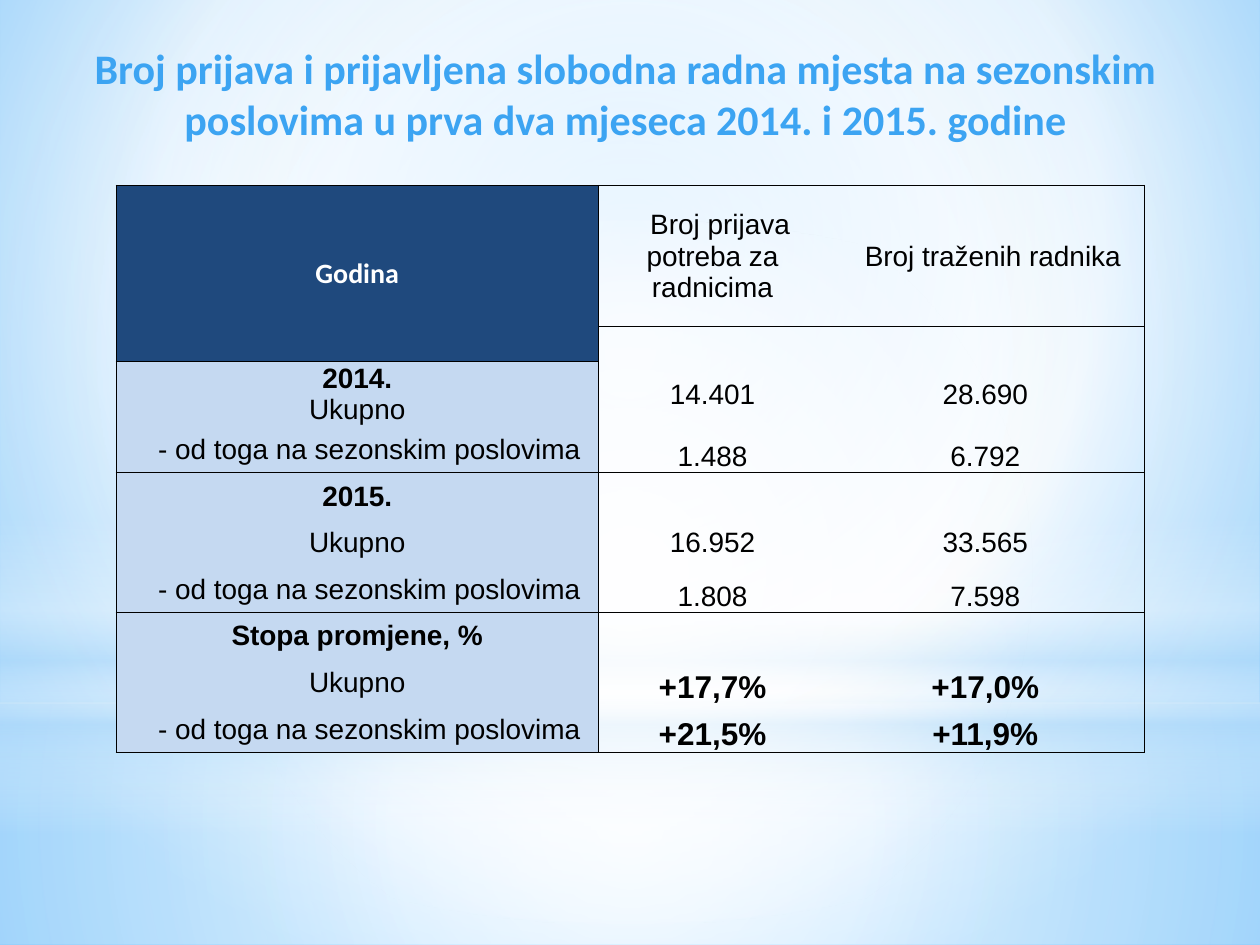
from lxml import etree
from pptx import Presentation
from pptx.dml.color import RGBColor
from pptx.enum.shapes import MSO_SHAPE
from pptx.enum.text import MSO_ANCHOR, PP_ALIGN
from pptx.oxml.ns import qn
from pptx.util import Inches, Pt

CENTER = PP_ALIGN.CENTER
TOP, MIDDLE, BOTTOM = MSO_ANCHOR.TOP, MSO_ANCHOR.MIDDLE, MSO_ANCHOR.BOTTOM
RECTANGLE, OVAL = MSO_SHAPE.RECTANGLE, MSO_SHAPE.OVAL

SKY = RGBColor(0x3C, 0xA4, 0xF2)
NAVY = RGBColor(0x1F, 0x49, 0x7D)
PALE = RGBColor(0xC5, 0xD9, 0xF1)
BLACK = RGBColor(0, 0, 0)
WHITE = RGBColor(0xFF, 0xFF, 0xFF)
MIST = RGBColor(0xB4, 0xDC, 0xFA)
BACK_INNER = RGBColor(0x9E, 0xD5, 0xFF)
BACK_OUTER = RGBColor(0x5B, 0xB9, 0xFF)

TITLE = ("Broj prijava i prijavljena slobodna radna mjesta na sezonskim "
         "poslovima u prva dva mjeseca 2014. i 2015. godine")
SEASONAL = "- od toga na sezonskim poslovima"
ROWS = [
    ("Godina", "Broj prijava potreba za radnicima", "Broj traženih radnika"),
    ("", "", ""),
    ("2014.\nUkupno", "14.401", "28.690"),
    (SEASONAL, "1.488", "6.792"),
    ("2015.", "", ""),
    ("Ukupno", "16.952", "33.565"),
    (SEASONAL, "1.808", "7.598"),
    ("Stopa promjene, %", "", ""),
    ("Ukupno", "+17,7%", "+17,0%"),
    (SEASONAL, "+21,5%", "+11,9%"),
]
GROUP_TITLES = ("2014.", "2015.", "Stopa promjene, %")
GROUP_ENDS = (3, 6, 9)
COLUMN_WIDTHS = (3.83, 1.81, 2.52)
ROW_HEIGHTS = [1.12, 0.28, 0.51] + [0.37] * 7

# Gradient stops: position %, colour, opacity %
BACKGROUND = [(0, BACK_INNER, 100), (60, WHITE, 100), (100, BACK_OUTER, 100)]
CENTRED = (50, 50, 50, 50)
GLOWS = [  # kind, left, top, width, height, stops, focus (None: vertical)
    (RECTANGLE, 0, 5.58, 10, 1.92,
     [(0, WHITE, 91), (37, WHITE, 76), (100, MIST, 79)], CENTRED),
    (RECTANGLE, 0, 0, 10, 5.58,
     [(0, WHITE, 89), (48, WHITE, 62), (100, MIST, 79)], CENTRED),
    (RECTANGLE, 0, 4.12, 10, 2.5,
     [(0, WHITE, 0), (29, WHITE, 30), (45, MIST, 40), (55, WHITE, 26),
      (65, MIST, 60), (100, WHITE, 0)], None),
    (OVAL, 0, 1.75, 10, 5.58, [(0, WHITE, 100), (56, WHITE, 0)], CENTRED),
]


def add_node(parent, tag, **attributes):
    node = etree.SubElement(parent, qn(tag))
    for name, value in attributes.items():
        node.set(name, str(value))
    return node


def set_gradient(fill, owner, stops, focus):
    """Give owner a gradient, radial around focus or else vertical."""
    fill.solid()
    solid = next(owner.iter(qn("a:solidFill")))
    gradient = etree.Element(qn("a:gradFill"), rotWithShape="1")
    stop_list = add_node(gradient, "a:gsLst")
    for position, color, opacity in stops:
        stop = add_node(stop_list, "a:gs", pos=position * 1000)
        tint = add_node(stop, "a:srgbClr", val=color)
        if opacity < 100:
            add_node(tint, "a:alpha", val=opacity * 1000)
    if focus:
        radial = add_node(gradient, "a:path", path="circle")
        sides = {side: share * 1000 for side, share in zip("ltrb", focus)}
        add_node(radial, "a:fillToRect", **sides)
    else:
        add_node(gradient, "a:lin", ang=90 * 60000, scaled=0)
    solid.getparent().replace(solid, gradient)


def write(frame, text, size=16, font="Arial", color=BLACK, bold=False, indent=0):
    """Fill a frame with centred lines; group titles are always bold."""
    for number, line in enumerate(text.split("\n")):
        para = frame.add_paragraph() if number else frame.paragraphs[0]
        para.alignment = CENTER
        if indent:
            para._p.get_or_add_pPr().set("indent", str(Inches(indent)))
        if not line:
            add_node(para._p, "a:endParaRPr", sz=size * 100)
            continue
        span = para.add_run()
        span.text = line
        span.font.size, span.font.name = Pt(size), font
        span.font.bold = bold or line in GROUP_TITLES
        span.font.color.rgb = color


def set_borders(cell, sides):
    properties = cell._tc.get_or_add_tcPr()
    for place, side in enumerate("LRTB"):
        line = etree.Element(qn("a:ln" + side), w=str(Pt(0.5)))
        if side in sides:
            add_node(add_node(line, "a:solidFill"), "a:srgbClr", val=BLACK)
        else:
            add_node(line, "a:noFill")
        properties.insert(place, line)


def border_sides(row, column):
    ends = GROUP_ENDS + ((1,) if column == 0 else (0,))
    sides = "LR" if column == 0 else "L" if column == 1 else "R"
    if row == 0 or row - 1 in ends:
        sides += "T"
    if row in ends:
        sides += "B"
    return sides


def text_format(row, column, text):
    if row == 0:
        if column == 0:
            return dict(font="Calibri", color=WHITE, bold=True)
        return dict(indent=0.12)
    if text == SEASONAL:
        return dict(indent=0.19)
    if text.endswith("%") and column:
        return dict(size=18, bold=True)
    return {}


def add_figures(page):
    table_frame = page.shapes.add_table(
        len(ROWS), len(COLUMN_WIDTHS), Inches(0.92), Inches(1.47),
        Inches(sum(COLUMN_WIDTHS)), Inches(sum(ROW_HEIGHTS)))
    table = table_frame.table
    table.first_row = table.horz_banding = False
    for column, width in zip(table.columns, COLUMN_WIDTHS):
        column.width = Inches(width)
    for row, height in zip(table.rows, ROW_HEIGHTS):
        row.height = Inches(height)
    table.cell(0, 0).merge(table.cell(1, 0))

    for row, texts in enumerate(ROWS):
        for column, text in enumerate(texts):
            cell = table.cell(row, column)
            cell.margin_left = cell.margin_right = cell.margin_top = Inches(0.01)
            cell.margin_bottom = 0
            low = column and (row in GROUP_ENDS or text.startswith("+"))
            cell.vertical_anchor = BOTTOM if low else MIDDLE
            if column:
                cell.fill.background()
            else:
                cell.fill.solid()
                cell.fill.fore_color.rgb = NAVY if row < 2 else PALE
            set_borders(cell, border_sides(row, column))
            write(cell.text_frame, text, **text_format(row, column, text))


def main():
    deck = Presentation()
    deck.slide_width, deck.slide_height = Inches(10), Inches(7.5)
    page = deck.slides.add_slide(deck.slide_layouts[5])
    set_gradient(page.background.fill, page._element, BACKGROUND, (20, 10, 20, 60))

    for kind, left, top, width, height, stops, focus in GLOWS:
        glow = page.shapes.add_shape(kind, Inches(left), Inches(top),
                                     Inches(width), Inches(height))
        glow.shadow.inherit = False
        glow.line.fill.background()
        set_gradient(glow.fill, glow._element.spPr, stops, focus)

    title = page.shapes.title
    page.shapes._spTree.append(title._element)  # in front of the glows
    title.left, title.top = Inches(0.2), Inches(0.29)
    title.width, title.height = Inches(9.53), Inches(0.77)
    title.text_frame.word_wrap = True
    title.text_frame.vertical_anchor = TOP
    write(title.text_frame, TITLE, size=24, font="Calibri", color=SKY, bold=True)

    add_figures(page)
    deck.save("out.pptx")


if __name__ == "__main__":
    main()
